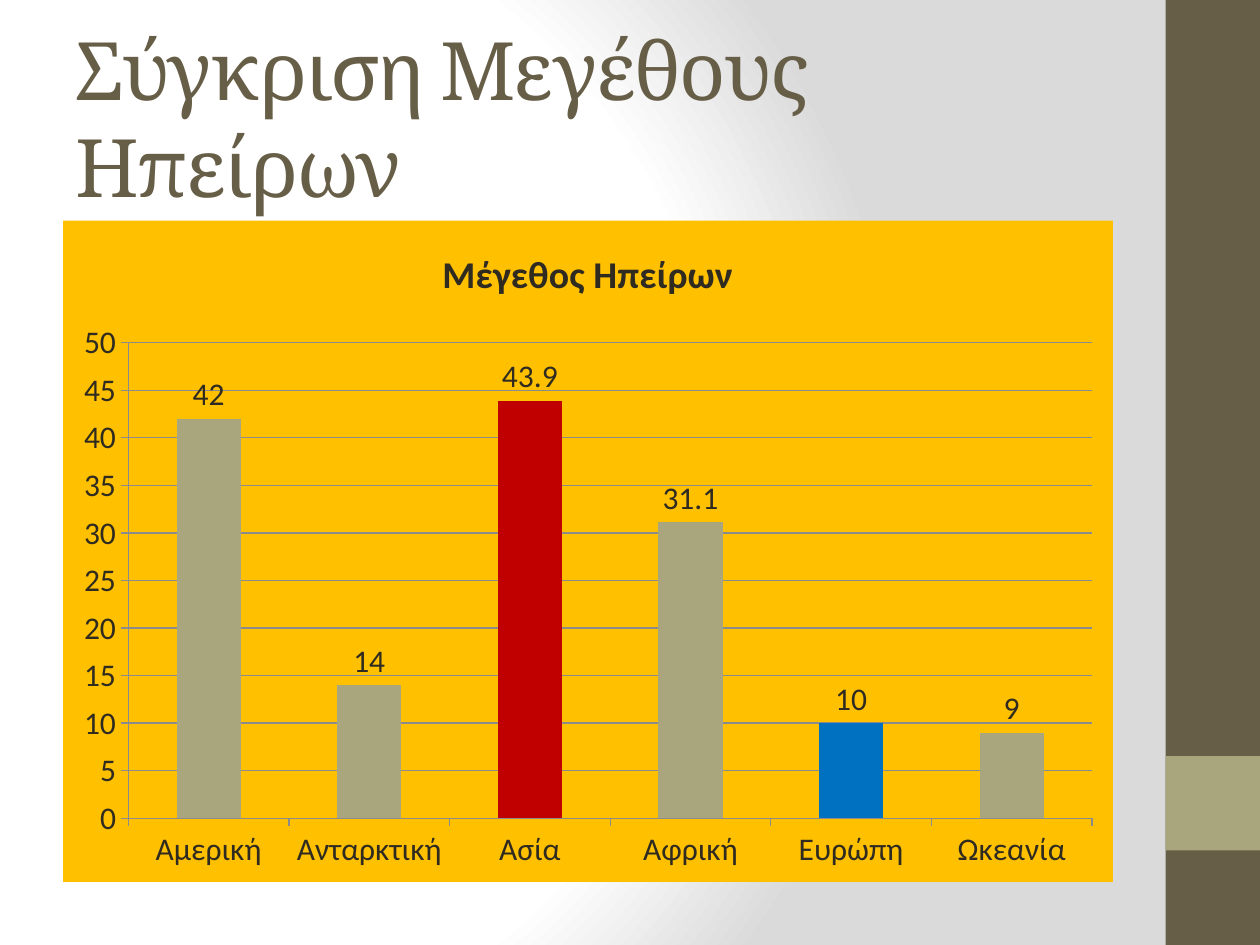
from dataclasses import dataclass

from lxml import etree
from pptx import Presentation
from pptx.chart.data import CategoryChartData
from pptx.dml.color import RGBColor
from pptx.enum.chart import XL_CHART_TYPE, XL_LABEL_POSITION, XL_TICK_MARK
from pptx.enum.shapes import MSO_SHAPE
from pptx.enum.text import MSO_ANCHOR
from pptx.oxml import parse_xml
from pptx.oxml.ns import nsdecls, qn
from pptx.util import Pt

PX = 9525
RECTANGLE = MSO_SHAPE.RECTANGLE
MIDDLE = MSO_ANCHOR.MIDDLE
COLUMNS = XL_CHART_TYPE.COLUMN_CLUSTERED
OUTSIDE_END = XL_LABEL_POSITION.OUTSIDE_END
TICK_OUT = XL_TICK_MARK.OUTSIDE


@dataclass(frozen=True)
class Theme:
    heading_font: str = "Cambria"
    body_font: str = "Calibri"
    heading_size: float = 46
    chart_title_size: float = 21.6
    chart_size: float = 18
    brown: str = "675E47"
    sage: str = "A9A57C"
    ink: str = "2F2B20"
    white: str = "FFFFFF"
    grey: str = "DADADA"
    grid: str = "8B8B8B"
    amber: str = "FFC000"
    red: str = "C00000"
    blue: str = "0070C0"


def paint(fill, color):
    fill.solid()
    fill.fore_color.rgb = RGBColor.from_string(color)


def set_font(font, name, size, color, bold=False):
    font.name, font.size, font.bold = name, Pt(size), bold
    font.color.rgb = RGBColor.from_string(color)


class SlideBuilder:
    """Draws themed elements on the current slide."""

    def __init__(self, slide, theme):
        self.slide, self.theme = slide, theme

    def background(self, stops, focus):
        fill = self.slide.background.fill
        fill.gradient()
        gradient = self.slide.element.find(".//" + qn("a:gradFill"))
        for child in list(gradient):
            gradient.remove(child)
        stop_list = etree.SubElement(gradient, qn("a:gsLst"))
        for percent, color in stops:
            stop = etree.SubElement(stop_list, qn("a:gs"), pos=str(percent * 1000))
            etree.SubElement(stop, qn("a:srgbClr"), val=color)
        circle = etree.SubElement(gradient, qn("a:path"), {"path": "circle"})
        edges = {side: str(percent * 1000) for side, percent in zip("ltrb", focus)}
        etree.SubElement(circle, qn("a:fillToRect"), edges)

    def block(self, box, color):
        shape = self.slide.shapes.add_shape(RECTANGLE, *(v * PX for v in box))
        shape.shadow.inherit = False
        paint(shape.fill, color)
        shape.line.fill.background()

    def heading(self, box, text):
        frame = self.slide.shapes.add_textbox(*(v * PX for v in box)).text_frame
        frame.word_wrap = True
        frame.vertical_anchor = MIDDLE
        run = frame.paragraphs[0].add_run()
        run.text = text
        theme = self.theme
        set_font(run.font, theme.heading_font, theme.heading_size, theme.brown)
        run.font._element.set("spc", "-100")

    def column_chart(self, box, title, sizes, highlights):
        theme = self.theme
        data = CategoryChartData()
        data.categories = list(sizes)
        data.add_series("Series 1", list(sizes.values()))
        chart = self.slide.shapes.add_chart(
            COLUMNS, *(v * PX for v in box), data).chart
        set_font(chart.font, theme.body_font, theme.chart_size, theme.ink)
        chart.has_legend = False
        self.chart_title(chart, title)
        self.chart_area(chart, theme.amber)

        for axis in (chart.category_axis, chart.value_axis):
            axis.major_tick_mark = TICK_OUT
            paint(axis.format.line.fill, theme.grid)
        chart.value_axis.minimum_scale = 0
        chart.value_axis.maximum_scale = 50
        chart.value_axis.major_unit = 5
        chart.value_axis.has_major_gridlines = True
        paint(chart.value_axis.major_gridlines.format.line.fill, theme.grid)

        plot = chart.plots[0]
        plot.gap_width = 150
        plot.vary_by_categories = False
        series = plot.series[0]
        paint(series.format.fill, theme.sage)
        for continent, color in highlights.items():
            position = list(sizes).index(continent)
            paint(series.points[position].format.fill, color)
        labels = series.data_labels
        labels.show_value = True
        labels.position = OUTSIDE_END

    def chart_title(self, chart, title):
        theme = self.theme
        chart.has_title = True
        chart.chart_title.include_in_layout = False
        run = chart.chart_title.text_frame.paragraphs[0].add_run()
        run.text = title
        set_font(run.font, theme.body_font, theme.chart_title_size, theme.ink, True)

    def chart_area(self, chart, color):
        area = parse_xml(
            f'<c:spPr {nsdecls("c", "a")}><a:solidFill><a:srgbClr val="{color}"/>'
            "</a:solidFill><a:ln><a:noFill/></a:ln></c:spPr>")
        chart._chartSpace.find(qn("c:chart")).addnext(area)


def main():
    theme = Theme()
    deck = Presentation()
    deck.slide_width, deck.slide_height = 960 * PX, 720 * PX
    builder = SlideBuilder(deck.slides.add_slide(deck.slide_layouts[6]), theme)
    builder.background(
        [(0, theme.white), (75, theme.white), (100, theme.grey)], (20, 50, 100, 50))
    builder.block((888, 0, 72, 720), theme.brown)
    builder.block((888, 576, 72, 72), theme.sage)
    builder.heading((48, 29, 800, 120), "Σύγκριση Μεγέθους Ηπείρων")
    continent_sizes = {
        "Αμερική": 42, "Ανταρκτική": 14, "Ασία": 43.9,
        "Αφρική": 31.1, "Ευρώπη": 10, "Ωκεανία": 9,
    }
    builder.column_chart(
        (48, 168, 800, 504), "Μέγεθος Ηπείρων", continent_sizes,
        {"Ασία": theme.red, "Ευρώπη": theme.blue})
    deck.save("out.pptx")


if __name__ == "__main__":
    main()
